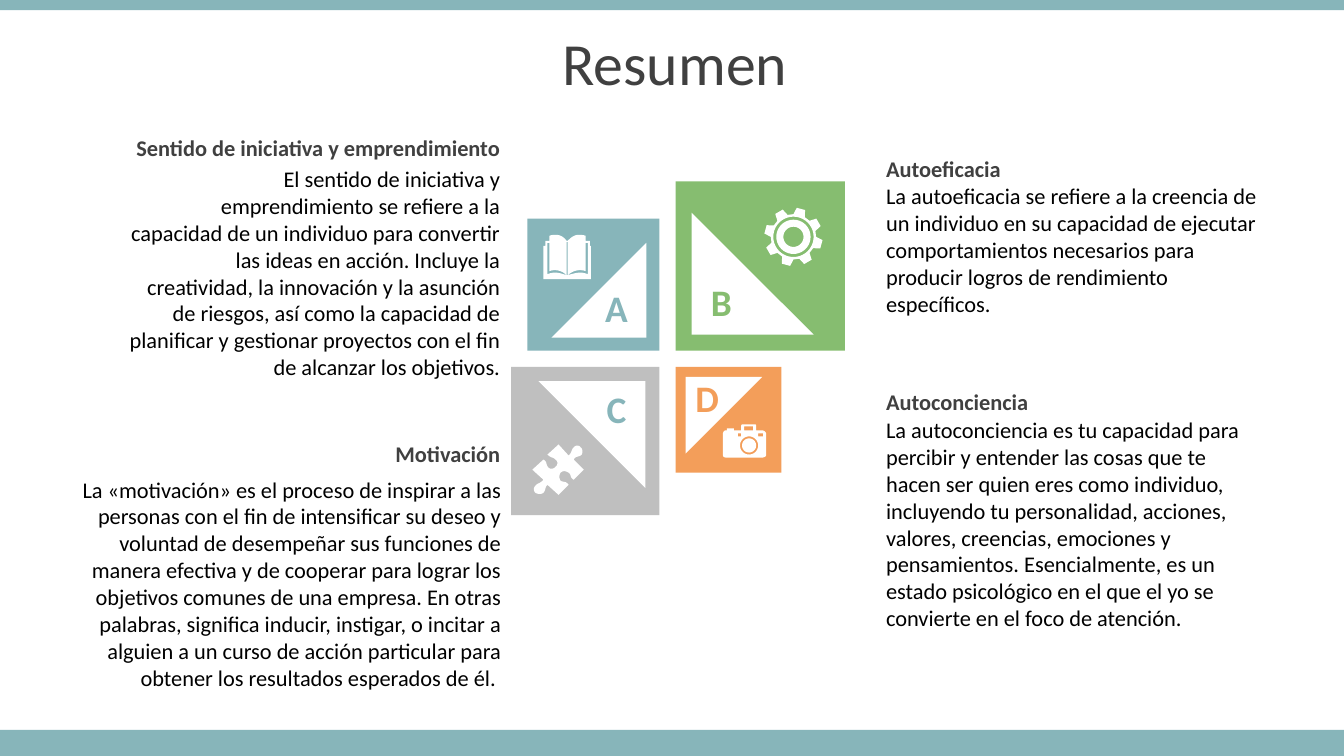
"""Build the "Resumen" slide: four lettered tiles with icons and four definitions."""
from dataclasses import dataclass
from math import cos, pi, radians, sin

from pptx import Presentation
from pptx.dml.color import RGBColor
from pptx.enum.shapes import MSO_SHAPE as SHAPE
from pptx.enum.text import MSO_ANCHOR as ANCHOR, MSO_AUTO_SIZE as AUTO, PP_ALIGN as ALIGN
from pptx.util import Inches, Pt

TEAL = RGBColor(0x87, 0xB5, 0xBA)
GREEN = RGBColor(0x86, 0xBD, 0x70)
ORANGE = RGBColor(0xF3, 0x9E, 0x5A)
GRAY = RGBColor(0xBF, 0xBF, 0xBF)
DARK = RGBColor(0x40, 0x40, 0x40)
BLACK = RGBColor(0, 0, 0)
WHITE = RGBColor(0xFF, 0xFF, 0xFF)
FONT = "Calibri"
Contour = list[tuple[float, ...]]


@dataclass
class Tile:
    letter: str
    fill: RGBColor
    left: float
    top: float
    size: float
    tri_left: float
    tri_top: float
    tri_size: float
    turn: int
    letter_left: float
    letter_top: float
    letter_color: RGBColor


@dataclass
class Topic:
    heading: str
    head_box: tuple[float, float, float, float]
    body: str
    body_box: tuple[float, float, float, float]
    align: ALIGN


TILES = [
    Tile("A", TEAL, 5.23, 2.17, 1.31, 5.47, 2.41, 0.94, 270, 5.82, 2.78, TEAL),
    Tile("B", GREEN, 6.7, 1.8, 1.68, 6.86, 2.11, 1.21, 0, 6.86, 2.72, GREEN),
    Tile("C", GRAY, 5.07, 3.64, 1.47, 5.34, 3.78, 1.06, 180, 5.82, 3.78, TEAL),
    Tile("D", ORANGE, 6.7, 3.64, 1.05, 6.8, 3.74, 0.76, 90, 6.72, 3.67, ORANGE),
]

TOPICS = [
    Topic("Sentido de iniciativa y emprendimiento", (0.31, 1.28, 4.75, 0.37),
          "El sentido de iniciativa y emprendimiento se refiere a la capacidad de un individuo "
          "para convertir las ideas en acción. Incluye la creatividad, la innovación y la "
          "asunción de riesgos, así como la capacidad de planificar y gestionar proyectos con "
          "el fin de alcanzar los objetivos.", (1.16, 1.59, 3.9, 2.26), ALIGN.RIGHT),
    Topic("Motivación", (1.36, 4.32, 3.7, 0.37),
          "La «motivación» es el proceso de inspirar a las personas con el fin de intensificar "
          "su deseo y voluntad de desempeñar sus funciones de manera efectiva y de cooperar "
          "para lograr los objetivos comunes de una empresa. En otras palabras, significa "
          "inducir, instigar, o incitar a alguien a un curso de acción particular para obtener "
          "los resultados esperados de él. ", (0.47, 4.67, 4.6, 2.26), ALIGN.RIGHT),
    Topic("Autoeficacia", (8.69, 1.49, 3.7, 0.37),
          "La autoeficacia se refiere a la creencia de un individuo en su capacidad de ejecutar "
          "comportamientos necesarios para producir logros de rendimiento específicos.",
          (8.69, 1.76, 3.95, 1.45), ALIGN.LEFT),
    Topic("Autoconciencia", (8.69, 3.8, 3.7, 0.37),
          "La autoconciencia es tu capacidad para percibir y entender las cosas que te hacen "
          "ser quien eres como individuo, incluyendo tu personalidad, acciones, valores, "
          "creencias, emociones y pensamientos. Esencialmente, es un estado psicológico en el "
          "que el yo se convierte en el foco de atención.", (8.69, 4.08, 3.81, 2.26), ALIGN.LEFT),
]


def circle(cx: float, cy: float, radius: float) -> Contour:
    angles = [2 * pi * i / 40 for i in range(40)]
    return [(cx + radius * cos(a), cy + radius * sin(a)) for a in angles]


def box(left: float, top: float, right: float, bottom: float) -> Contour:
    return [(left, top), (right, top), (right, bottom), (left, bottom)]


def gear(cx: float, cy: float) -> Contour:
    profile = [(-15, 0.225), (-8.5, 0.29), (8.5, 0.29), (15, 0.225)]
    polar = [(radians(15 + 45 * i + turn), r) for i in range(8) for turn, r in profile]
    return [(cx + r * sin(a), cy - r * cos(a)) for a, r in polar]


BOOK = [
    [(5.39, 2.44), (5.41, 2.44), (5.41, 2.39), (5.45, 2.39), (5.45, 2.34),
     (5.47, 2.33, 5.5, 2.33, 5.51, 2.33), (5.56, 2.33, 5.59, 2.35, 5.62, 2.39), (5.63, 2.39),
     (5.67, 2.35, 5.7, 2.33, 5.74, 2.33), (5.76, 2.33, 5.78, 2.33, 5.81, 2.34), (5.81, 2.39),
     (5.85, 2.39), (5.85, 2.44), (5.86, 2.44), (5.86, 2.77), (5.39, 2.77)],
    [(5.45, 2.41), (5.43, 2.41), (5.43, 2.72), (5.51, 2.69, 5.55, 2.71, 5.62, 2.73),
     (5.57, 2.68, 5.5, 2.67, 5.45, 2.69)],
    [(5.81, 2.41), (5.83, 2.41), (5.83, 2.72), (5.75, 2.69, 5.71, 2.71, 5.63, 2.73),
     (5.69, 2.68, 5.75, 2.67, 5.81, 2.69)],
    box(5.62, 2.4, 5.63, 2.73),
]
PUZZLE = [
    [(5.76, 4.44), (5.78, 4.45, 5.78, 4.49, 5.77, 4.51), (5.74, 4.54, 5.71, 4.52, 5.69, 4.56),
     (5.79, 4.66), (5.69, 4.76), (5.65, 4.74, 5.67, 4.71, 5.64, 4.69),
     (5.61, 4.67, 5.58, 4.67, 5.56, 4.69), (5.55, 4.7, 5.54, 4.74, 5.56, 4.77),
     (5.6, 4.79, 5.61, 4.77, 5.64, 4.81), (5.54, 4.91), (5.43, 4.81),
     (5.4, 4.84, 5.42, 4.85, 5.39, 4.89), (5.36, 4.91, 5.33, 4.9, 5.31, 4.89),
     (5.29, 4.87, 5.29, 4.84, 5.31, 4.82), (5.33, 4.79, 5.36, 4.8, 5.39, 4.76),
     (5.28, 4.66), (5.39, 4.56), (5.43, 4.58, 5.41, 4.61, 5.44, 4.64),
     (5.46, 4.66, 5.5, 4.65, 5.51, 4.63), (5.53, 4.62, 5.54, 4.58, 5.51, 4.56),
     (5.48, 4.53, 5.47, 4.55, 5.43, 4.51), (5.54, 4.41), (5.64, 4.52),
     (5.68, 4.48, 5.66, 4.47, 5.69, 4.44), (5.71, 4.41, 5.75, 4.42, 5.76, 4.44)],
]
GEAR = [gear(7.87, 2.35), *(circle(7.87, 2.35, r) for r in (0.2, 0.17, 0.1))]
CAMERA = [
    [(7.36, 4.21), (7.49, 4.21), (7.5, 4.21, 7.5, 4.22, 7.5, 4.23), (7.5, 4.27), (7.56, 4.27),
     (7.58, 4.27, 7.6, 4.29, 7.6, 4.31), (7.6, 4.51), (7.6, 4.53, 7.58, 4.54, 7.56, 4.54),
     (7.2, 4.54), (7.18, 4.54, 7.17, 4.53, 7.17, 4.51), (7.17, 4.31),
     (7.17, 4.29, 7.18, 4.27, 7.2, 4.27), (7.21, 4.27), (7.21, 4.25), (7.28, 4.25),
     (7.28, 4.27), (7.35, 4.27), (7.35, 4.23), (7.35, 4.22, 7.36, 4.21, 7.36, 4.21)],
    box(7.38, 4.23, 7.47, 4.27), box(7.32, 4.3, 7.35, 4.33), box(7.52, 4.3, 7.57, 4.33),
    circle(7.43, 4.42, 0.09), circle(7.43, 4.42, 0.07),
]


def flatten(contour: Contour) -> list[tuple[int, int]]:
    points = [contour[0]]
    for step in contour[1:]:
        if len(step) == 2:
            points.append(step)
            continue
        (x0, y0), (x1, y1, x2, y2, x3, y3) = points[-1], step
        for t in (i / 8 for i in range(1, 9)):
            a, b, c, d = (1 - t) ** 3, 3 * t * (1 - t) ** 2, 3 * t * t * (1 - t), t ** 3
            points.append((a * x0 + b * x1 + c * x2 + d * x3, a * y0 + b * y1 + c * y2 + d * y3))
    return [(Inches(x), Inches(y)) for x, y in points]


def paint(sp, color: RGBColor) -> None:
    sp.fill.solid()
    sp.fill.fore_color.rgb = color
    sp.line.fill.background()
    sp.shadow.inherit = False


def add_preset(s, kind: SHAPE, at: tuple[float, ...], color: RGBColor, turn: int = 0) -> None:
    sp = s.shapes.add_shape(kind, *map(Inches, at))
    sp.rotation = turn
    paint(sp, color)


def add_icon(s, contours: list[Contour]) -> None:
    first, *rest = map(flatten, contours)
    builder = s.shapes.build_freeform(*first[0])
    builder.add_line_segments(first[1:])
    for points in rest:
        builder.move_to(*points[0])
        builder.add_line_segments(points[1:])
    paint(builder.convert_to_shape(), WHITE)


def write(sp, text: str, size: float, color: RGBColor, align: ALIGN, bold: bool = False):
    tf = sp.text_frame
    tf.word_wrap = True
    tf.auto_size = AUTO.NONE
    p = tf.paragraphs[0]
    p.text = text
    p.alignment = align
    p.font.name, p.font.size, p.font.bold = FONT, Pt(size), bold
    p.font.color.rgb = color
    return p


def add_text(s, at: tuple[float, ...], text: str, size: float, color: RGBColor,
             align: ALIGN, bold: bool = False) -> None:
    write(s.shapes.add_textbox(*map(Inches, at)), text, size, color, align, bold)


def main() -> None:
    prs = Presentation()
    prs.slide_width, prs.slide_height = Inches(13.33), Inches(7.5)
    s = prs.slides.add_slide(prs.slide_layouts[5])
    for top, height in ((7.24, 0.26), (0, 0.1)):
        add_preset(s, SHAPE.RECTANGLE, (0, top, 13.33, height), TEAL)

    title = s.shapes.title
    title.left, title.top, title.width, title.height = map(Inches, (0.03, 0.24, 13.33, 0.84))
    p = write(title, "Resumen", 42.7, DARK, ALIGN.CENTER)
    p.line_spacing, p.space_before = 0.9, Pt(10)
    title.text_frame.vertical_anchor = ANCHOR.MIDDLE

    for t in TILES:
        add_preset(s, SHAPE.RECTANGLE, (t.left, t.top, t.size, t.size), t.fill)
        add_preset(s, SHAPE.RIGHT_TRIANGLE, (t.tri_left, t.tri_top, t.tri_size, t.tri_size),
                   WHITE, t.turn)
        add_text(s, (t.letter_left, t.letter_top, 0.59, 0.55), t.letter, 26.7,
                 t.letter_color, ALIGN.CENTER, True)
    for icon in (BOOK, PUZZLE, GEAR, CAMERA):
        add_icon(s, icon)
    for topic in TOPICS:
        add_text(s, topic.head_box, topic.heading, 16, DARK, topic.align, True)
        add_text(s, topic.body_box, topic.body, 16, BLACK, topic.align)
    prs.save("out.pptx")


if __name__ == "__main__":
    main()
